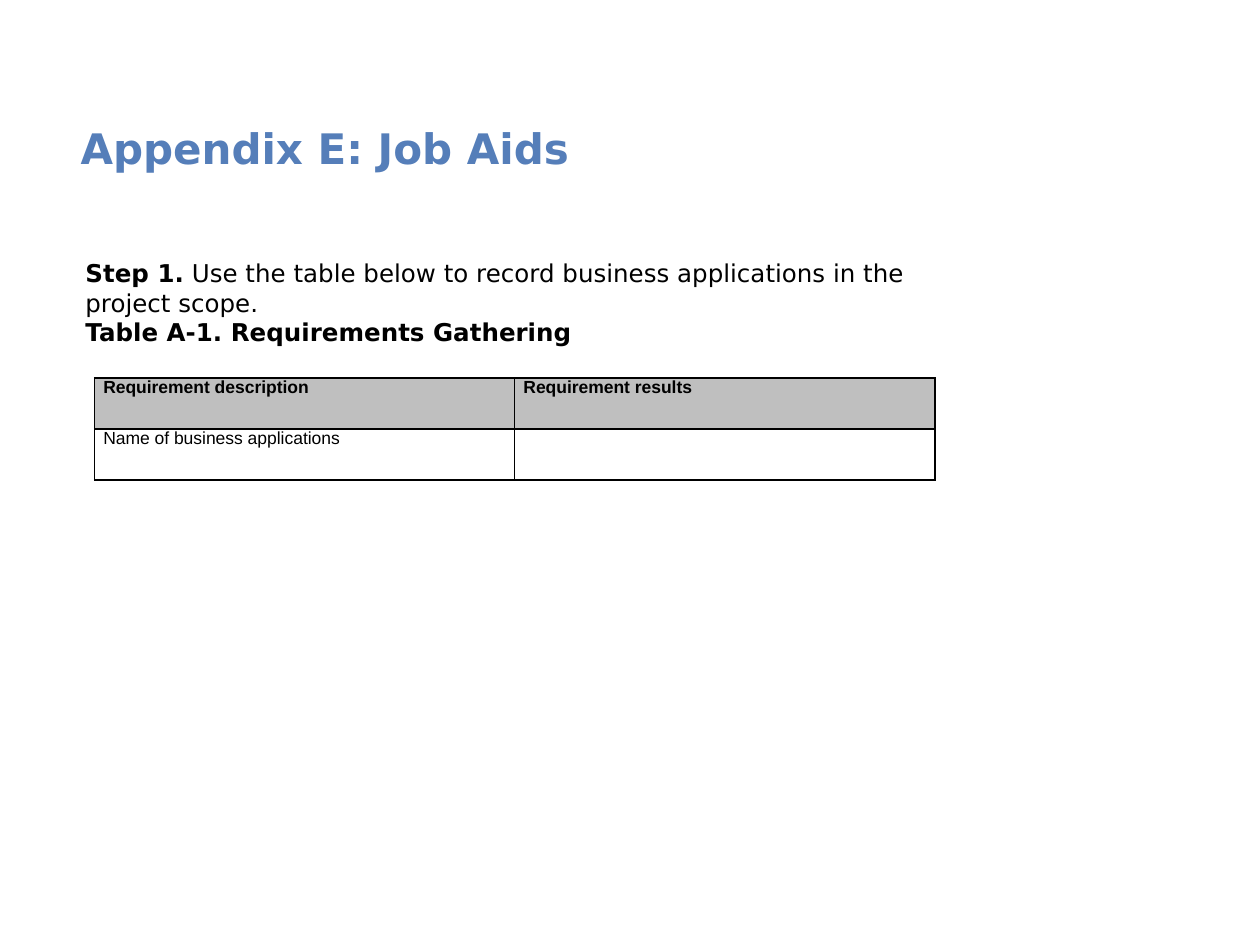
"""Build the job aids appendix slide with its requirements gathering table."""
from lxml import etree
from pptx import Presentation
from pptx.dml.color import RGBColor
from pptx.oxml.ns import qn
from pptx.util import Inches, Pt

COLORS = {"title": "557EB9", "text": "000000", "header": "BFBFBF", "border": "000000"}
HEADING_FONT = "DejaVu Sans"
TABLE_FONT = "Arial"
MARGINS = ("margin_left", "margin_top", "margin_right", "margin_bottom")


def add_span(para, text, name, size, color, bold):
    span = para.add_run()
    span.text = text
    for key, value in {"name": name, "size": Pt(size), "bold": bold}.items():
        setattr(span.font, key, value)
    span.font.color.rgb = RGBColor.from_string(COLORS[color])


def add_borders(cell):
    properties = cell._tc.get_or_add_tcPr()
    for position, side in enumerate(("lnL", "lnR", "lnT", "lnB")):
        line = etree.Element(qn(f"a:{side}"), w=str(Pt(1)))
        fill = etree.SubElement(line, qn("a:solidFill"))
        etree.SubElement(fill, qn("a:srgbClr"), val=COLORS["border"])
        properties.insert(position, line)


deck = Presentation()
deck.slide_width, deck.slide_height = Inches(10), Inches(7.5)
page = deck.slides.add_slide(deck.slide_layouts[6])

title_box = page.shapes.add_textbox(Inches(0.59), Inches(0.92), Inches(9), Inches(0.5))
title_box.text_frame.word_wrap = True
for margin in MARGINS:
    setattr(title_box.text_frame, margin, Inches(0.05))
add_span(title_box.text_frame.paragraphs[0], "Appendix E: Job Aids", HEADING_FONT, 24, "title", True)

step_box = page.shapes.add_textbox(Inches(0.58), Inches(2), Inches(7.17), Inches(4.11))
step_box.text_frame.word_wrap = True
step_para = step_box.text_frame.paragraphs[0]
caption_para = step_box.text_frame.add_paragraph()
for para, text, bold in (
    (step_para, "Step 1.", True),
    (step_para, " Use the table below to record business applications in the project scope.", False),
    (caption_para, "Table A-1. Requirements Gathering", True),
):
    add_span(para, text, HEADING_FONT, 14, "text", bold)

rows = [
    ["Requirement description", "Requirement results"],
    ["Name of business applications", ""],
]
table = page.shapes.add_table(
    len(rows), len(rows[0]), Inches(0.75), Inches(3), Inches(6.67), Inches(0.81)
).table
table.horz_banding = False
for row_index, texts in enumerate(rows):
    is_header = row_index == 0
    for column_index, text in enumerate(texts):
        cell = table.cell(row_index, column_index)
        for margin, inset in zip(MARGINS, (0.07, 0, 0.07, 0)):
            setattr(cell, margin, Inches(inset))
        if is_header:
            cell.fill.solid()
            cell.fill.fore_color.rgb = RGBColor.from_string(COLORS["header"])
        else:
            cell.fill.background()
        add_borders(cell)
        para = cell.text_frame.paragraphs[0]
        para.space_after = Pt(3)
        para.font.size = Pt(10)
        if text:
            add_span(para, text, TABLE_FONT, 10, "text", is_header)

deck.save("out.pptx")
